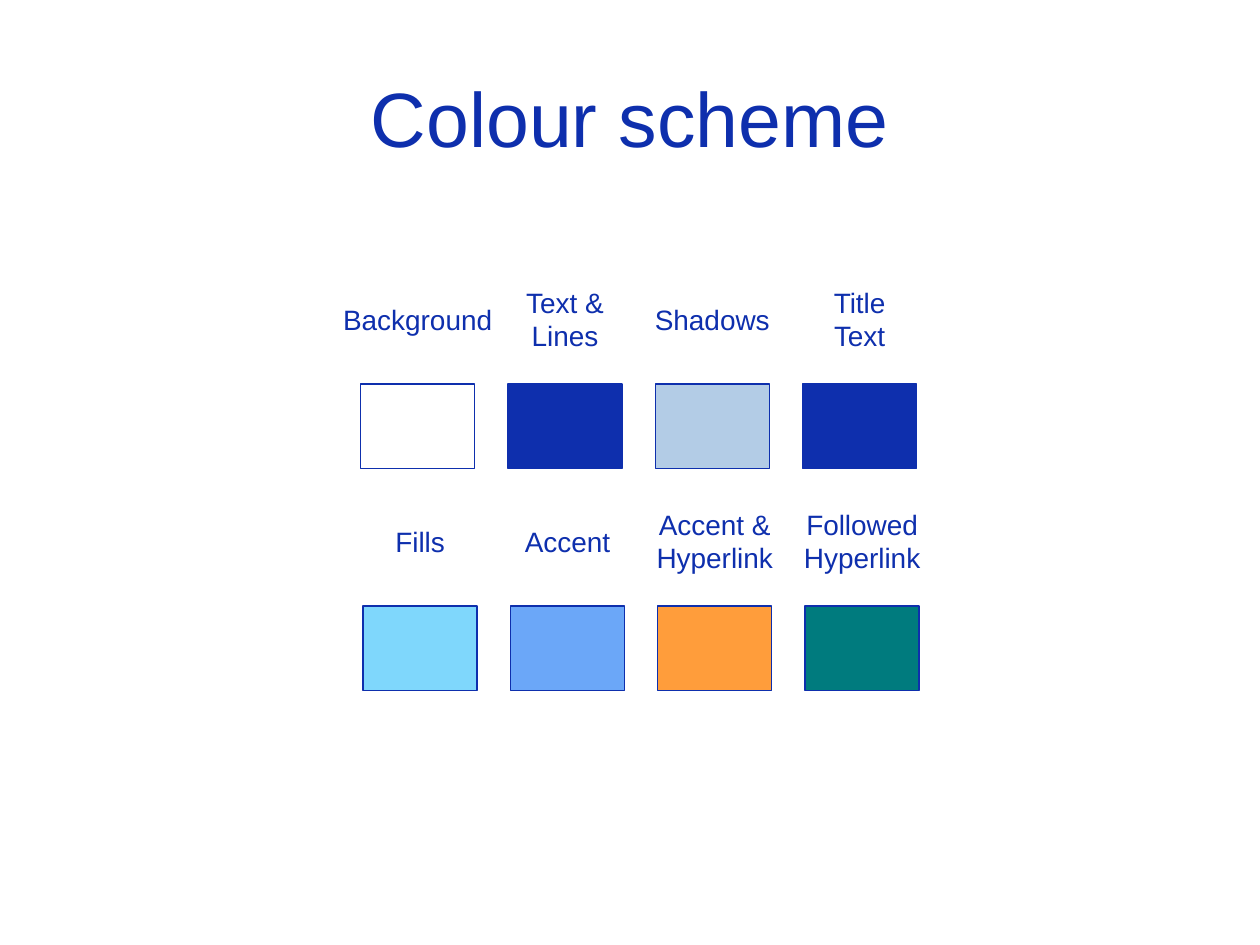
from dataclasses import dataclass

from pptx import Presentation
from pptx.dml.color import RGBColor as Rgb
from pptx.enum.shapes import MSO_SHAPE as Preset
from pptx.enum.text import MSO_ANCHOR as Anchor, MSO_AUTO_SIZE as AutoSize, PP_ALIGN as Align
from pptx.slide import Slide
from pptx.text.text import TextFrame
from pptx.util import Cm, Pt


@dataclass(frozen=True)
class Theme:
    font: str = "Arial"
    ink: str = "0E2FAD"
    background: str = "FFFFFF"
    title_size: float = 44
    label_size: float = 16
    outline: float = 0.75


@dataclass(frozen=True)
class Swatch:
    label: str
    label_width: float
    fill: str


@dataclass(frozen=True)
class SwatchRow:
    left: float
    top: float
    swatches: tuple[Swatch, ...]


THEME = Theme()
SWATCH_WIDTH, SWATCH_HEIGHT, SWATCH_PITCH = 2.3, 1.7, 2.97
LABEL_RISE = 1.3
LABEL_HEIGHTS = {1: 0.94, 2: 1.63}

ROWS = (
    SwatchRow(7.27, 7.74, (
        Swatch("Background", 3.55, THEME.background),
        Swatch("Text &\nLines", 2.15, THEME.ink),
        Swatch("Shadows", 2.85, "B3CCE6"),
        Swatch("Title\vText", 1.6, THEME.ink),
    )),
    SwatchRow(7.32, 12.22, (
        Swatch("Fills", 1.55, "7FD7FC"),
        Swatch("Accent", 2.25, "6BA7F8"),
        Swatch("Accent &\nHyperlink", 2.95, "FF9D3B"),
        Swatch("Followed\nHyperlink", 2.95, "007B7E"),
    )),
)


def write_centred(frame: TextFrame, words: str, size: float) -> None:
    frame.text = words
    for paragraph in frame.paragraphs:
        paragraph.alignment = Align.CENTER
        paragraph.font.name = THEME.font
        paragraph.font.size = Pt(size)
        paragraph.font.color.rgb = Rgb.from_string(THEME.ink)


def draw_title(slide: Slide, words: str) -> None:
    frame = slide.shapes.add_textbox(Cm(1.27), Cm(0.76), Cm(22.86), Cm(3.18)).text_frame
    frame.word_wrap = True
    frame.vertical_anchor = Anchor.MIDDLE
    write_centred(frame, words, THEME.title_size)


def draw_swatch(slide: Slide, swatch: Swatch, left: float, top: float) -> None:
    tile = slide.shapes.add_shape(
        Preset.RECTANGLE, Cm(left), Cm(top), Cm(SWATCH_WIDTH), Cm(SWATCH_HEIGHT))
    tile.shadow.inherit = False
    tile.fill.solid()
    tile.fill.fore_color.rgb = Rgb.from_string(swatch.fill)
    tile.line.color.rgb = Rgb.from_string(THEME.ink)
    tile.line.width = Pt(THEME.outline)

    label_height = LABEL_HEIGHTS[len(swatch.label.splitlines())]
    label_left = left + (SWATCH_WIDTH - swatch.label_width) / 2
    label_top = top - LABEL_RISE - label_height / 2
    frame = slide.shapes.add_textbox(
        Cm(label_left), Cm(label_top), Cm(swatch.label_width), Cm(label_height)).text_frame
    frame.word_wrap = False
    frame.auto_size = AutoSize.SHAPE_TO_FIT_TEXT
    write_centred(frame, swatch.label, THEME.label_size)


def main() -> None:
    deck = Presentation()
    deck.slide_width, deck.slide_height = Cm(25.4), Cm(19.05)
    slide = deck.slides.add_slide(deck.slide_layouts[6])
    slide.background.fill.solid()
    slide.background.fill.fore_color.rgb = Rgb.from_string(THEME.background)
    draw_title(slide, "Colour scheme")
    for row in ROWS:
        for column, swatch in enumerate(row.swatches):
            draw_swatch(slide, swatch, row.left + column * SWATCH_PITCH, row.top)
    deck.save("out.pptx")


if __name__ == "__main__":
    main()
